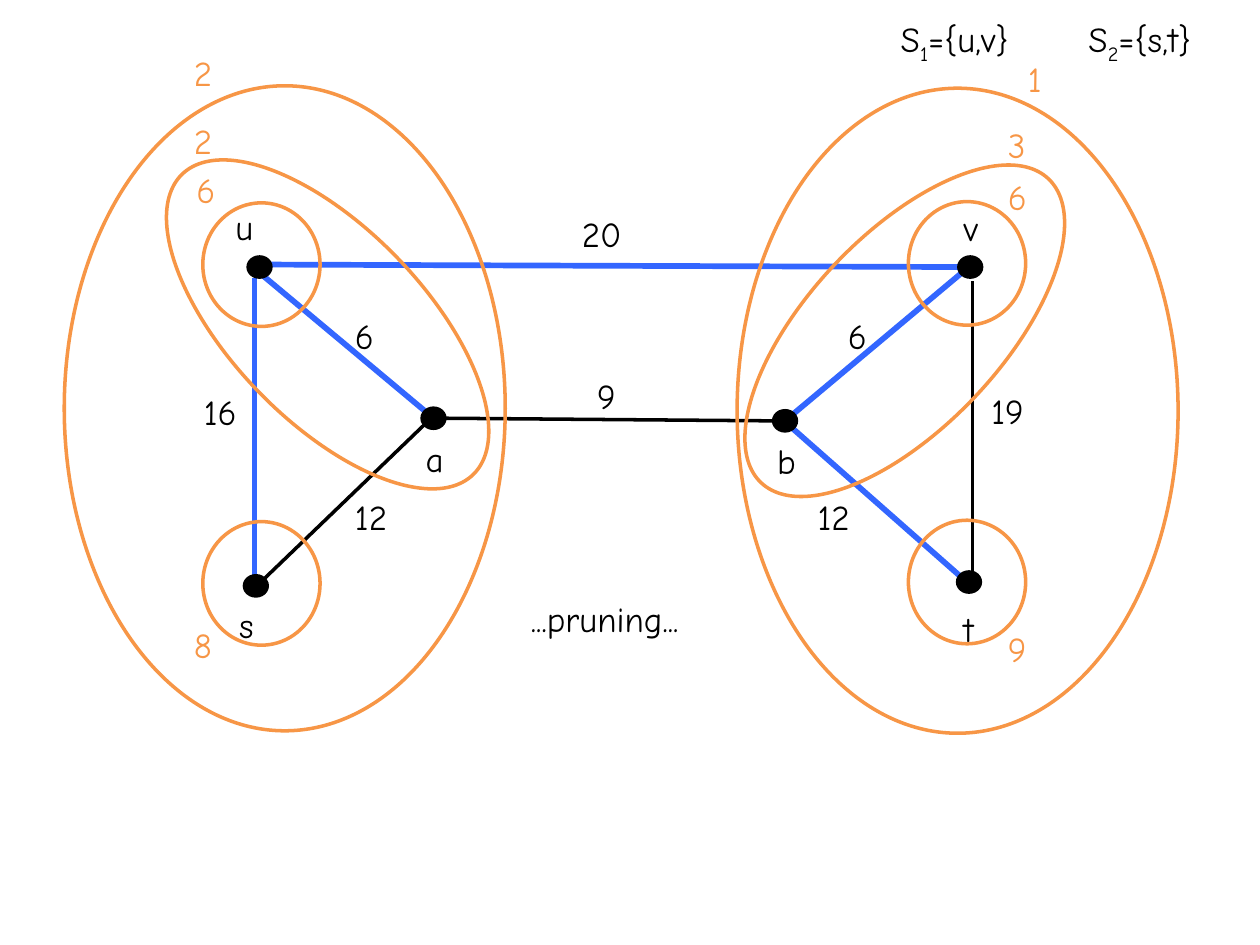
from lxml.etree import SubElement
from pptx import Presentation
from pptx.dml.color import RGBColor
from pptx.enum.shapes import MSO_CONNECTOR, MSO_SHAPE
from pptx.enum.text import MSO_AUTO_SIZE, PP_ALIGN
from pptx.oxml.ns import qn
from pptx.util import Pt

FONT = "Comic Neue"
COLORS = {"black": "000000", "blue": "3366FF", "orange": "F79646"}
EDGE_WIDTHS = {"black": 2, "blue": 3.25}

# Edges of the graph: from x, y, to x, y, colour
EDGES = [
    (150.5, 157.7, 242.6, 234.7, "blue"),   # u-a
    (254.2, 239, 442.1, 240.5, "black"),    # a-b
    (452.9, 236.9, 550.1, 155.5, "blue"),   # b-v
    (452.9, 244.8, 550.1, 330.5, "blue"),   # b-t
    (242.6, 242.6, 150.5, 331.2, "black"),  # a-s
    (145.4, 159.1, 145.4, 329.8, "blue"),   # u-s
    (555.8, 160.6, 555.8, 330.5, "black"),  # v-t
    (152.6, 151.2, 547.9, 152.6, "blue"),   # u-v
]

# Vertices: name, centre x, y, label left, top
VERTICES = [
    ("u", 148.3, 152.6, 127.4, 113.8),
    ("v", 554.4, 152.6, 543.6, 114.5),
    ("s", 146.2, 334.8, 129.6, 341.3),
    ("t", 553.7, 332.6, 543.6, 343.4),
    ("a", 247.7, 239, 236.2, 246.2),
    ("b", 448.6, 240.5, 437, 247.7),
]
DOT_SIZE = (13, 11.5)

# Numbers: text, left, top, width
NARROW = 23.8
EDGE_COSTS = [
    ("9", 334.1, 210.2, NARROW),
    ("20", 325.4, 118.1, 43.9),
    ("6", 195.8, 176.4, NARROW),
    ("12", 195.8, 279.4, 40.3),
    ("16", 109.4, 219.6, 49.7),
    ("19", 559.4, 218.9, 38.9),
    ("6", 477.4, 176.4, NARROW),
    ("12", 460.1, 279.4, 40.3),
]
SET_VALUES = [
    ("6", 105.1, 92.9),
    ("6", 568.8, 96.5),
    ("8", 103.7, 352.8),
    ("9", 568.8, 355),
    ("2", 103.7, 64.8),
    ("3", 568.8, 67),
    ("2", 103.7, 25.9),
    ("1", 580.3, 29.5),
]

# Ovals around vertex sets: size, then (centre x, y, rotation) of each
SET_OVALS = [
    ((67, 70.6), [(149.4, 151.2, 0), (149.4, 333.4, 0),
                  (552.6, 150.5, 0), (552.6, 332.6, 0)]),
    ((239, 110.2), [(187.2, 185.4, 45.9), (517, 189, 133.4)]),
    ((368.6, 252), [(162.7, 233.3, 90), (547.2, 234.7, 90)]),
]

# Definitions of the sets: subscript, members, left
SET_NAMES = [("1", "={u,v}", 507.6), ("2", "={s,t}", 614.9)]


def rgb(name):
    return RGBColor.from_string(COLORS[name])


def add_edge(page, x1, y1, x2, y2, color):
    edge = page.shapes.add_connector(
        MSO_CONNECTOR.STRAIGHT, Pt(x1), Pt(y1), Pt(x2), Pt(y2))
    edge.line.color.rgb = rgb(color)
    edge.line.width = Pt(EDGE_WIDTHS[color])
    SubElement(edge._element.spPr, qn("a:effectLst"))


def add_oval(page, x, y, size, color, filled=False, rotation=0):
    """Draw an ellipse centred on x, y."""
    width, height = size
    oval = page.shapes.add_shape(
        MSO_SHAPE.OVAL, Pt(x - width / 2), Pt(y - height / 2), Pt(width), Pt(height))
    oval.rotation = rotation
    oval.shadow.inherit = False
    oval.line.color.rgb = rgb(color)
    oval.line.width = Pt(2)
    if filled:
        oval.fill.solid()
        oval.fill.fore_color.rgb = rgb(color)
    else:
        oval.fill.background()


def add_text(page, parts, left, top, width=NARROW, color="black", align=PP_ALIGN.LEFT):
    """Write one line made of (text, baseline percent) parts."""
    box = page.shapes.add_textbox(Pt(left), Pt(top), Pt(width), Pt(31.7))
    box.text_frame.word_wrap = True
    box.text_frame.auto_size = MSO_AUTO_SIZE.SHAPE_TO_FIT_TEXT
    para = box.text_frame.paragraphs[0]
    para.alignment = align
    for text, baseline in parts:
        span = para.add_run()
        span.text = text
        span.font.name = FONT
        span.font.size = Pt(20)
        span.font.color.rgb = rgb(color)
        if baseline:
            span._r.get_or_add_rPr().set("baseline", str(baseline * 1000))


def main():
    deck = Presentation()
    deck.slide_width, deck.slide_height = Pt(720), Pt(540)
    page = deck.slides.add_slide(deck.slide_layouts[6])

    for edge in EDGES:
        add_edge(page, *edge)
    for name, x, y, left, top in VERTICES:
        add_oval(page, x, y, DOT_SIZE, "black", filled=True)
        add_text(page, [(name, 0)], left, top)
    for cost, left, top, width in EDGE_COSTS:
        add_text(page, [(cost, 0)], left, top, width)
    for subscript, members, left in SET_NAMES:
        add_text(page, [("S", 0), (subscript, -25), (members, 0)], left, 6.5, 92.2)

    for size, places in SET_OVALS:
        for x, y, rotation in places:
            add_oval(page, x, y, size, "orange", rotation=rotation)
    for value, left, top in SET_VALUES:
        add_text(page, [(value, 0)], left, top, color="orange")
    add_text(page, [("...pruning...", 0)], 280.8, 337.7, 129.6, align=PP_ALIGN.CENTER)

    deck.save("out.pptx")


if __name__ == "__main__":
    main()
